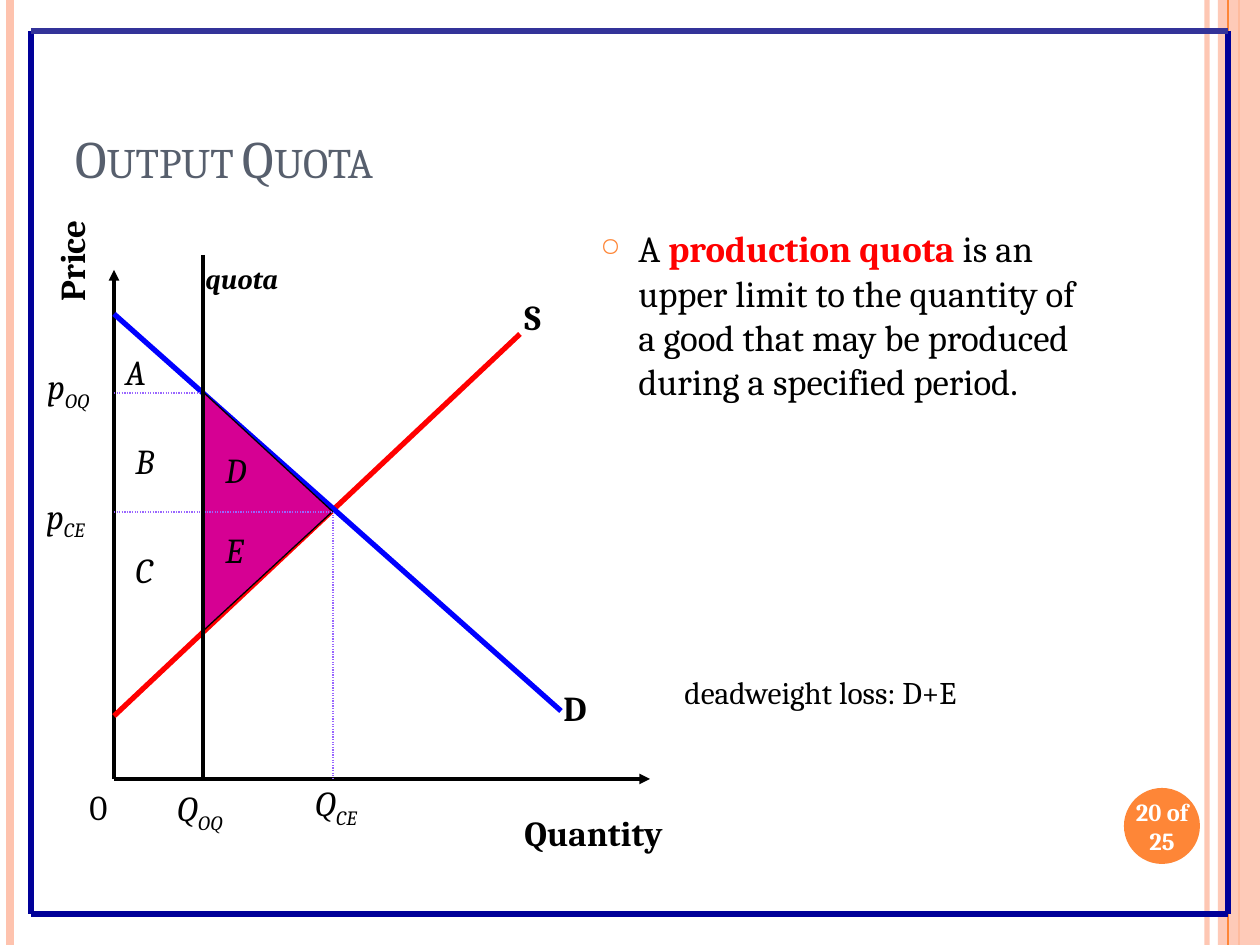
from dataclasses import dataclass

from lxml import etree
from pptx import Presentation
from pptx.dml.color import RGBColor
from pptx.enum.dml import MSO_LINE
from pptx.enum.shapes import MSO_CONNECTOR, MSO_SHAPE
from pptx.enum.text import MSO_ANCHOR, PP_ALIGN
from pptx.oxml.ns import qn
from pptx.util import Emu, Pt

PX_PER_INCH = 126
STRAIGHT = MSO_CONNECTOR.STRAIGHT
DOTTED = MSO_LINE.ROUND_DOT
RECTANGLE, OVAL, TRIANGLE = MSO_SHAPE.RECTANGLE, MSO_SHAPE.OVAL, MSO_SHAPE.ISOSCELES_TRIANGLE
TOP, MIDDLE, BOTTOM = MSO_ANCHOR.TOP, MSO_ANCHOR.MIDDLE, MSO_ANCHOR.BOTTOM
LEFT, CENTER = PP_ALIGN.LEFT, PP_ALIGN.CENTER

FONT = "Cambria"
BLACK, WHITE, RED, BLUE = "000000", "FFFFFF", "FF0000", "0000FF"
PEACH, ORANGE, NAVY, INDIGO = "FEC3AE", "FE8637", "000099", "333399"
VIOLET, MAGENTA, SLATE = "9966FF", "D60093", "575F6D"

WIDTH, HEIGHT = 1260, 945
FRAME_LEFT, FRAME_TOP, FRAME_RIGHT, FRAME_BOTTOM = 31, 31, 1228, 914
AXIS_X, AXIS_Y = 114, 779
QUOTA_X, QUOTA_PRICE = 203, 393
MARKET_X, MARKET_PRICE = 333, 512


@dataclass
class Line:
    x1: int
    y1: int
    x2: int
    y2: int
    color: str
    points: float
    dotted: bool = False
    arrow: bool = False
    opacity: int = 100


@dataclass
class Label:
    text: str
    x: int
    y: int
    width: int
    height: int = 54
    subscript: str = ""
    size: int = 20
    color: str = BLACK
    bold: bool = False
    italic: bool = False
    align: PP_ALIGN = LEFT
    anchor: MSO_ANCHOR = TOP


def px(value: int) -> Emu:
    return Emu(round(value * 914400 / PX_PER_INCH))


def rgb(value: str) -> RGBColor:
    return RGBColor.from_string(value)


def set_opacity(fill_parent, percent: int) -> None:
    color = fill_parent.find(qn("a:solidFill"))[0]
    etree.SubElement(color, qn("a:alpha"), val=str(percent * 1000))


def draw_line(page, line: Line) -> None:
    connector = page.shapes.add_connector(
        STRAIGHT, px(line.x1), px(line.y1), px(line.x2), px(line.y2))
    connector.line.color.rgb = rgb(line.color)
    connector.line.width = Pt(line.points)
    if line.dotted:
        connector.line.dash_style = DOTTED
    properties = connector.line._get_or_add_ln()
    if line.opacity < 100:
        set_opacity(properties, line.opacity)
    if line.arrow:
        etree.SubElement(properties, qn("a:tailEnd"), type="triangle")
    etree.SubElement(connector._element.spPr, qn("a:effectLst"))


def draw_shape(page, kind, x: int, y: int, width: int, height: int, fill: str):
    shape = page.shapes.add_shape(kind, px(x), px(y), px(width), px(height))
    shape.shadow.inherit = False
    shape.fill.solid()
    shape.fill.fore_color.rgb = rgb(fill)
    shape.line.fill.background()
    return shape


def draw_label(page, label: Label):
    box = page.shapes.add_textbox(
        px(label.x), px(label.y), px(label.width), px(label.height))
    frame = box.text_frame
    frame.word_wrap = True
    frame.vertical_anchor = label.anchor
    para = frame.paragraphs[0]
    para.alignment = label.align
    font = para.font
    font.name, font.size = FONT, Pt(label.size)
    font.bold, font.italic = label.bold, label.italic
    font.color.rgb = rgb(label.color)
    para.add_run().text = label.text
    if label.subscript:
        span = para.add_run()
        span.text = label.subscript
        span.font._element.set("baseline", "-25000")
    return box


def draw_definition(page) -> None:
    box = draw_label(page, Label("A ", 588, 220, 504, 630, size=21))
    para = box.text_frame.paragraphs[0]
    term = para.add_run()
    term.text = "production quota"
    term.font.bold = True
    term.font.color.rgb = rgb(RED)
    para.add_run().text = (" is an upper limit to the quantity of a good "
                           "that may be produced during a specified period.")
    para.space_before = Pt(6)
    properties = para._p.get_or_add_pPr()
    properties.set("marL", str(px(38)))
    properties.set("indent", str(px(-38)))
    bullet_color = etree.Element(qn("a:buClr"))
    etree.SubElement(bullet_color, qn("a:srgbClr"), val=ORANGE)
    bullet_size = etree.Element(qn("a:buSzPct"), val="70000")
    bullet = etree.Element(qn("a:buChar"), char="○")
    for item in (bullet_color, bullet_size, bullet):
        properties.find(qn("a:defRPr")).addprevious(item)


def draw_background(page) -> None:
    draw_line(page, Line(1207, 0, 1207, HEIGHT, PEACH, 3, opacity=93))
    draw_line(page, Line(10, 0, 10, HEIGHT, PEACH, 4.5))
    draw_line(page, Line(1239, 0, 1239, HEIGHT, ORANGE, 1.5))
    band = draw_shape(page, RECTANGLE, 1218, 0, 42, HEIGHT, PEACH)
    set_opacity(band._element.spPr, 87)
    draw_line(page, Line(FRAME_RIGHT, 0, FRAME_RIGHT, HEIGHT, ORANGE, 0.75))
    draw_shape(page, OVAL, 1124, 788, 76, 76, ORANGE)
    for line in (
        Line(FRAME_RIGHT, FRAME_TOP, FRAME_RIGHT, FRAME_BOTTOM, NAVY, 3),
        Line(FRAME_LEFT, FRAME_BOTTOM, FRAME_RIGHT, FRAME_BOTTOM, NAVY, 3),
        Line(FRAME_LEFT, FRAME_TOP, FRAME_LEFT, FRAME_BOTTOM, NAVY, 3),
        Line(FRAME_LEFT, FRAME_TOP, FRAME_RIGHT, FRAME_TOP, INDIGO, 3),
    ):
        draw_line(page, line)


def draw_diagram(page) -> None:
    for line in (
        Line(AXIS_X, AXIS_Y, AXIS_X, 270, BLACK, 2, arrow=True),
        Line(AXIS_X, AXIS_Y, 650, AXIS_Y, BLACK, 2, arrow=True),
        Line(AXIS_X, 716, 520, 334, RED, 3),
        Line(AXIS_X, 314, 561, 711, BLUE, 3),
        Line(MARKET_X, MARKET_PRICE, MARKET_X, AXIS_Y, VIOLET, 0.75, dotted=True),
    ):
        draw_line(page, line)
    loss = draw_shape(page, TRIANGLE, 149, 447, 238, 129, MAGENTA)
    loss.rotation = 90
    loss.line.color.rgb = rgb(BLACK)
    loss.line.width = Pt(0.75)
    for line in (
        Line(AXIS_X, MARKET_PRICE, MARKET_X, MARKET_PRICE, VIOLET, 0.75, dotted=True),
        Line(AXIS_X, QUOTA_PRICE, QUOTA_X, QUOTA_PRICE, VIOLET, 0.75, dotted=True),
        Line(QUOTA_X, QUOTA_PRICE, QUOTA_X, AXIS_Y, VIOLET, 0.75, dotted=True),
        Line(QUOTA_X, 255, QUOTA_X, AXIS_Y, BLACK, 1.75),
    ):
        draw_line(page, line)


LABELS = (
    Label("20 of 25", 1120, 790, 84, 72, size=14, color=WHITE, bold=True,
          align=CENTER, anchor=MIDDLE),
    Label("Quantity", 512, 805, 208, bold=True),
    Label("0", 72, 779, 53, align=CENTER),
    Label("p", 34, 488, 110, subscript="CE", italic=True),
    Label("Q", 302, 775, 118, subscript="CE", italic=True),
    Label("p", 35, 358, 110, subscript="OQ", italic=True),
    Label("Q", 164, 780, 118, subscript="OQ", italic=True),
    Label("A", 113, 344, 110, italic=True),
    Label("B", 123, 433, 110, italic=True),
    Label("C", 123, 542, 110, italic=True),
    Label("D", 213, 442, 110, italic=True),
    Label("E", 213, 522, 110, italic=True),
    Label("deadweight loss: D+E", 672, 609, 496, 108, size=18, anchor=BOTTOM),
    Label("D", 551, 680, 49, bold=True),
    Label("S", 512, 289, 118, bold=True),
    Label("quota", 193, 255, 118, 47, size=16, bold=True, italic=True),
)


def main() -> None:
    deck = Presentation()
    deck.slide_width, deck.slide_height = px(WIDTH), px(HEIGHT)
    page = deck.slides.add_slide(deck.slide_layouts[6])
    draw_background(page)
    draw_definition(page)
    draw_diagram(page)
    for label in LABELS:
        draw_label(page, label)
    price = draw_label(page, Label("Price", 44, 96, 67, 218, bold=True))
    price.rotation = 180
    price.text_frame._txBody.bodyPr.set("vert", "eaVert")
    title = draw_label(page, Label("Output Quota", 63, 118, 1029, 77, size=30,
                                   color=SLATE, anchor=BOTTOM))
    title.text_frame.paragraphs[0].runs[0].font._element.set("cap", "small")
    deck.save("out.pptx")


if __name__ == "__main__":
    main()
